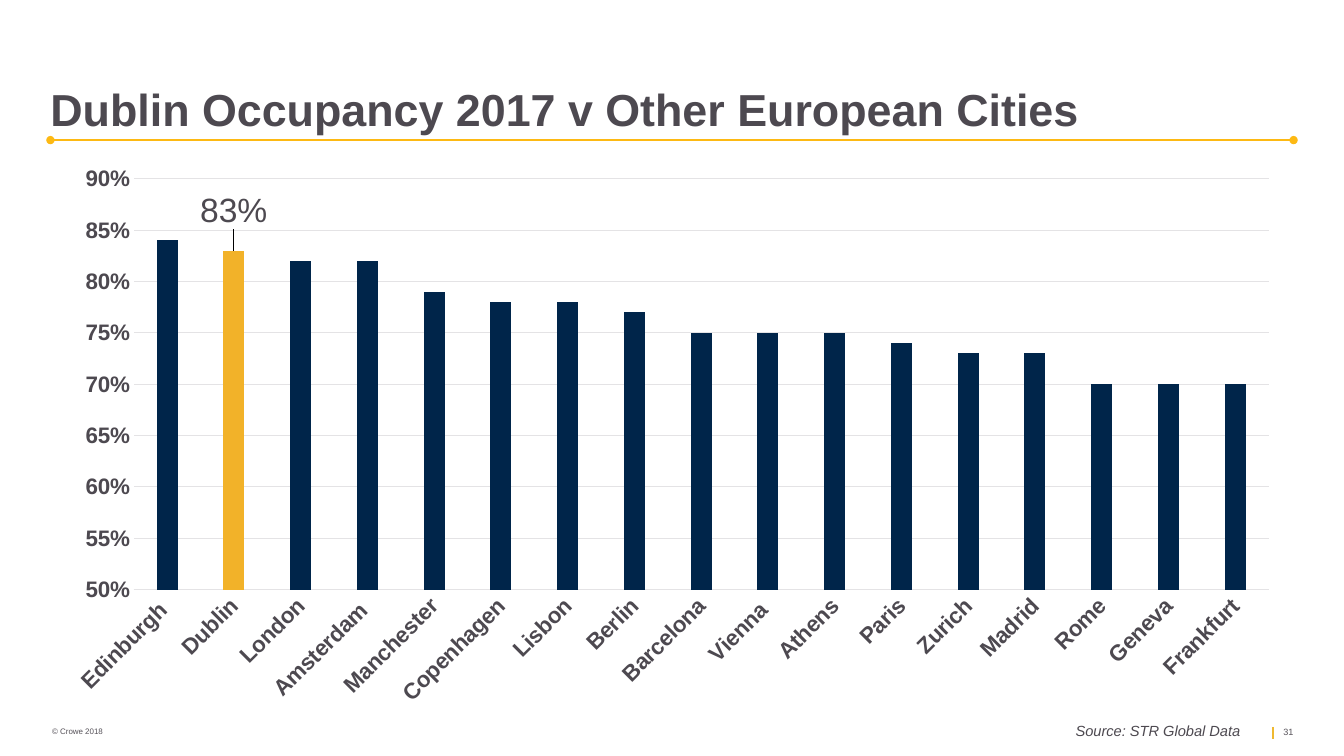
from lxml.etree import SubElement
from pptx import Presentation
from pptx.chart.data import CategoryChartData
from pptx.dml.color import RGBColor
from pptx.enum.chart import XL_CHART_TYPE, XL_LABEL_POSITION, XL_TICK_MARK
from pptx.enum.shapes import MSO_CONNECTOR
from pptx.enum.text import MSO_ANCHOR
from pptx.oxml import parse_xml
from pptx.oxml.ns import nsdecls, qn
from pptx.util import Inches, Pt

FONT = "Arial"
INK = RGBColor(0x4D, 0x49, 0x50)
FOOTER_GREY = RGBColor(0x56, 0x52, 0x59)
RULE_GOLD = RGBColor(0xFD, 0xB9, 0x13)
FOOTER_GOLD = RGBColor(0xEF, 0xB9, 0x31)
NAVY = RGBColor(0x00, 0x25, 0x4A)
DUBLIN_GOLD = RGBColor(0xF2, 0xB2, 0x29)
GRID_GREY = RGBColor(0xE4, 0xE3, 0xE5)

OCCUPANCY = {
    "Edinburgh ": 0.84, "Dublin": 0.83, "London": 0.82, "Amsterdam ": 0.82,
    "Manchester": 0.79, "Copenhagen": 0.78, "Lisbon": 0.78, "Berlin": 0.77,
    "Barcelona": 0.75, "Vienna ": 0.75, "Athens": 0.75, "Paris": 0.74,
    "Zurich": 0.73, "Madrid": 0.73, "Rome": 0.7, "Geneva": 0.7,
    "Frankfurt": 0.7,
}
LEADER_LINES = (
    '<c:extLst %s><c:ext uri="{CE6537A1-D6FC-4f65-9D91-7224C49458BB}" '
    'xmlns:c15="http://schemas.microsoft.com/office/drawing/2012/chart">'
    '<c15:showLeaderLines val="1"/></c:ext></c:extLst>' % nsdecls("c")
)


def style_font(font, size, color, bold=False, italic=False):
    font.name = FONT
    font.size = Pt(size)
    font.bold = bold
    font.italic = italic
    font.color.rgb = color


def add_label(slide, left, top, width, height, text, size, color,
              side_inset=0.1, **style):
    box = slide.shapes.add_textbox(
        Inches(left), Inches(top), Inches(width), Inches(height))
    frame = box.text_frame
    frame.word_wrap = True
    frame.vertical_anchor = MSO_ANCHOR.TOP
    frame.margin_left = frame.margin_right = Inches(side_inset)
    frame.text = text
    style_font(frame.paragraphs[0].runs[0].font, size, color, **style)


def add_rule(slide, start, end, color, weight, dotted_ends=False):
    rule = slide.shapes.add_connector(
        MSO_CONNECTOR.STRAIGHT, *(Inches(v) for v in start + end))
    rule.line.color.rgb = color
    rule.line.width = Pt(weight)
    if dotted_ends:
        for tag in ("a:headEnd", "a:tailEnd"):
            SubElement(rule.line._get_or_add_ln(), qn(tag), type="oval")
    SubElement(rule._element.spPr, qn("a:effectLst"))


def manual_layout(inner=False, **fractions):
    target = '<c:layoutTarget val="inner"/>' if inner else ""
    modes = ""
    if inner:
        modes = '<c:xMode val="edge"/><c:yMode val="edge"/>'
    values = "".join(f'<c:{k} val="{v}"/>' for k, v in fractions.items())
    return parse_xml(
        f'<c:layout {nsdecls("c")}><c:manualLayout>{target}{modes}{values}'
        '</c:manualLayout></c:layout>')


def style_axes(chart):
    cities, rates = chart.category_axis, chart.value_axis
    for axis in (cities, rates):
        axis.major_tick_mark = axis.minor_tick_mark = XL_TICK_MARK.NONE
        style_font(axis.tick_labels.font, 16, INK, bold=True)
    cities.format.line.color.rgb = GRID_GREY
    cities.format.line.width = Pt(0.75)
    cities._element.txPr.find(qn("a:bodyPr")).set("rot", "-2700000")
    rates.minimum_scale, rates.maximum_scale = 0.5, 0.9
    rates.major_unit = 0.05
    rates.format.line.fill.background()
    rates.has_major_gridlines = True
    rates.major_gridlines.format.line.color.rgb = GRID_GREY
    rates.major_gridlines.format.line.width = Pt(0.75)
    rates.tick_labels.number_format = "0%"
    rates.tick_labels.number_format_is_linked = False


def highlight_city(series, index):
    point = series.points[index]
    point.format.fill.solid()
    point.format.fill.fore_color.rgb = DUBLIN_GOLD
    label = point.data_label
    style_font(label.font, 24, INK)
    label.position = XL_LABEL_POSITION.OUTSIDE_END
    labels = series.data_labels
    labels.show_value = False
    city_label = labels._element.find(qn("c:dLbl"))
    city_label.insert(1, manual_layout(x=0, y=-0.03))
    labels._element.append(parse_xml(LEADER_LINES))


def add_occupancy_chart(slide, left, top, width, height):
    data = CategoryChartData(number_format="0%")
    data.categories = list(OCCUPANCY)
    data.add_series("Series 1", list(OCCUPANCY.values()))
    chart = slide.shapes.add_chart(
        XL_CHART_TYPE.COLUMN_CLUSTERED, Inches(left), Inches(top),
        Inches(width), Inches(height), data).chart
    style_font(chart.font, 14, INK)
    chart.has_legend = False
    chart.has_title = False
    style_axes(chart)
    plot = chart.plots[0]
    plot.gap_width, plot.overlap = 219, -27
    plot.vary_by_categories = False
    series = plot.series[0]
    series.format.fill.solid()
    series.format.fill.fore_color.rgb = NAVY
    highlight_city(series, list(OCCUPANCY).index("Dublin"))
    plot_area = plot._element.getparent()
    for layout in plot_area.findall(qn("c:layout")):
        plot_area.remove(layout)
    plot_area.insert(0, manual_layout(
        inner=True, x=0.067, y=0.042, w=0.913, h=0.732))


def add_header(slide, left, top, width):
    add_label(slide, left, top, width, 0.52,
              "Dublin Occupancy 2017 v Other European Cities",
              32, INK, side_inset=0, bold=True)
    rule_y = top + 0.63
    add_rule(slide, (left, rule_y), (left + width, rule_y),
             RULE_GOLD, 1, dotted_ends=True)


def add_footer(slide, left, top, width):
    right = left + width
    add_label(slide, left, top + 0.05, 2.64, 0.2, "© Crowe 2018",
              5.7, FOOTER_GREY)
    add_label(slide, right - 2.72, top, 1.86, 0.28,
              "Source: STR Global Data", 10.5, INK, italic=True)
    divider_x = right - 0.66
    add_rule(slide, (divider_x, top + 0.1), (divider_x, top + 0.22),
             FOOTER_GOLD, 1.5)
    add_label(slide, divider_x, top + 0.05, 0.66, 0.21, "31",
              6.5, FOOTER_GREY)


def main():
    deck = Presentation()
    deck.slide_width, deck.slide_height = Inches(13.33), Inches(7.5)
    slide = deck.slides.add_slide(deck.slide_layouts[6])
    add_header(slide, 0.5, 0.76, 12.33)
    add_occupancy_chart(slide, 0.5, 1.54, 12.33, 5.57)
    add_footer(slide, 0.42, 7.11, 12.87)
    deck.save("out.pptx")


if __name__ == "__main__":
    main()
